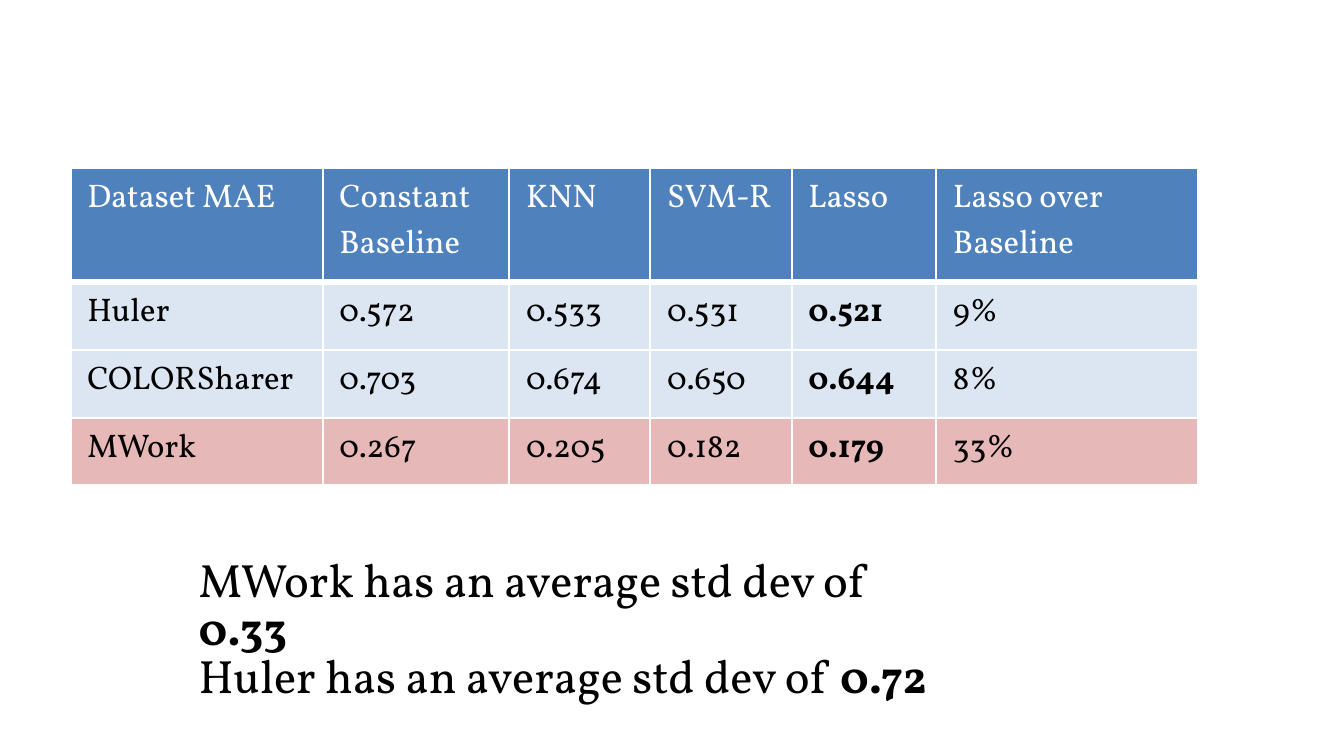
from lxml import etree
from pptx import Presentation
from pptx.dml.color import RGBColor
from pptx.oxml.ns import qn
from pptx.util import Pt

HEADER = ["Dataset MAE", "Constant Baseline", "KNN", "SVM-R", "Lasso", "Lasso over Baseline"]
RESULTS = [
    ["Huler", "0.572", "0.533", "0.531", "0.521", "9%"],
    ["COLORSharer", "0.703", "0.674", "0.650", "0.644", "8%"],
    ["MWork", "0.267", "0.205", "0.182", "0.179", "33%"],
]
DEVIATIONS = [("MWork", "0.33"), ("Huler", "0.72")]
BEST_COLUMN = HEADER.index("Lasso")
COLUMN_WIDTHS = [108, 80, 60.5, 60.5, 62, 112]
ROW_HEIGHTS = [49] + [29] * len(RESULTS)
ROW_FILLS = ["4F81BD", "DCE6F2", "DCE6F2", "E6B9B8"]


def color(value):
    return RGBColor.from_string(value)


class SlideWriter:
    font_name = "Vollkorn"
    white, black = "FFFFFF", "000000"

    def __init__(self, slide):
        self.slide = slide

    def run(self, paragraph, text, **format_values):
        run = paragraph.add_run()
        run.text = text
        text_color = format_values.pop("color", self.black)
        for name, value in {"name": self.font_name, "bold": False, **format_values}.items():
            setattr(run.font, name, value)
        run.font.color.rgb = color(text_color)

    def borders(self, cell, bottom):
        properties = cell._tc.get_or_add_tcPr()
        widths = {"lnL": 1, "lnR": 1, "lnT": 1, "lnB": bottom}
        for position, (side, width) in enumerate(widths.items()):
            line = etree.Element(qn(f"a:{side}"), w=str(Pt(width)))
            fill = etree.SubElement(line, qn("a:solidFill"))
            etree.SubElement(fill, qn("a:srgbClr"), val=self.white)
            properties.insert(position, line)

    def table(self, rows, left, top):
        table = self.slide.shapes.add_table(
            len(rows), len(COLUMN_WIDTHS), Pt(left), Pt(top),
            Pt(sum(COLUMN_WIDTHS)), Pt(sum(ROW_HEIGHTS))).table
        table.horz_banding = False
        for column, width in zip(table.columns, COLUMN_WIDTHS):
            column.width = Pt(width)
        for row, height in zip(table.rows, ROW_HEIGHTS):
            row.height = Pt(height)
        for r, (values, row_fill) in enumerate(zip(rows, ROW_FILLS)):
            for c, value in enumerate(values):
                cell = table.cell(r, c)
                cell.fill.solid()
                cell.fill.fore_color.rgb = color(row_fill)
                self.borders(cell, bottom=1 if r else 3)
                self.run(cell.text_frame.paragraphs[0], value, size=Pt(14),
                         bold=r > 0 and c == BEST_COLUMN,
                         color=self.black if r else self.white)

    def deviations(self, items, left, top, width, height):
        frame = self.slide.shapes.add_textbox(
            Pt(left), Pt(top), Pt(width), Pt(height)).text_frame
        frame.word_wrap = True
        for i, (dataset, deviation) in enumerate(items):
            paragraph = frame.add_paragraph() if i else frame.paragraphs[0]
            paragraph.line_spacing = 0.86
            self.run(paragraph, f"{dataset} has an average std dev of ", size=Pt(20))
            self.run(paragraph, deviation, size=Pt(20), bold=True)


def main():
    presentation = Presentation()
    presentation.slide_width, presentation.slide_height = Pt(576), Pt(324)
    writer = SlideWriter(presentation.slides.add_slide(presentation.slide_layouts[6]))
    writer.table([HEADER] + RESULTS, left=30.25, top=72)
    writer.deviations(DEVIATIONS, left=78, top=236, width=331, height=55.5)
    presentation.save("out.pptx")


if __name__ == "__main__":
    main()
